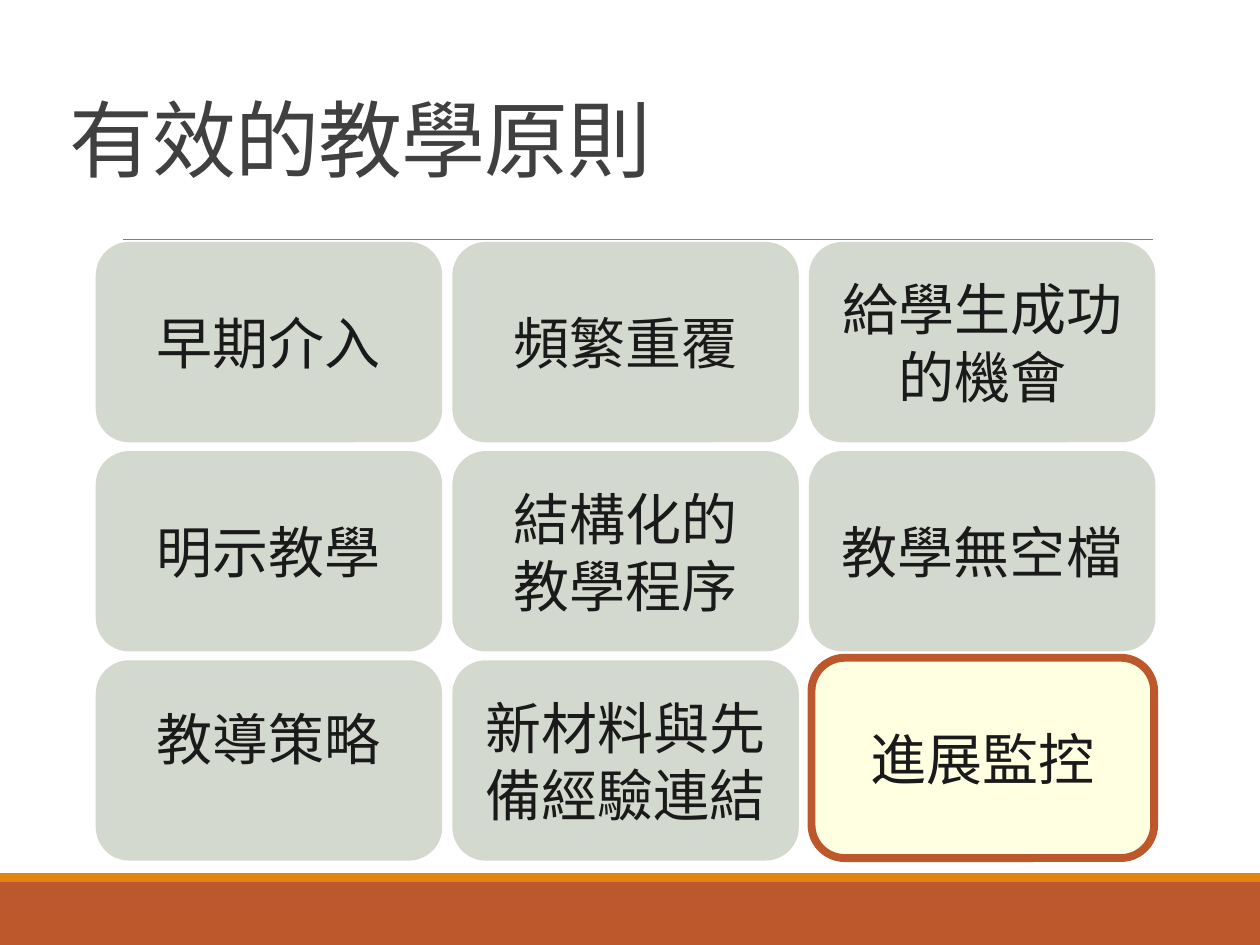
from dataclasses import dataclass

from pptx import Presentation
from pptx import util as u
from pptx.dml.color import RGBColor
from pptx.enum import shapes, text
from pptx.oxml.ns import qn
from lxml import etree

HUES = {"rust": "BD582C", "gold": "E48312", "rule": "808080", "title": "404040",
        "sage": "D4D9CF", "cream": "FFFFE1", "ink": "1A1A1A"}
CJK = "Noto Sans CJK SC"
WIDE, HIGH = 10, 7.5
LEFT, TOP = 0.76, 1.92
STEP_X, STEP_Y = 2.83, 1.66
CARD_W, CARD_H = 2.75, 1.59


@dataclass
class Card:
    col: int
    row: int
    words: str
    lift: float = 0  # extra space below the text, inches
    key: bool = False


CARDS = [
    Card(0, 0, "早期介入"),
    Card(1, 0, "頻繁重覆"),
    Card(2, 0, "給學生成功的機會"),
    Card(0, 1, "明示教學"),
    Card(1, 1, "結構化的\n教學程序"),
    Card(2, 1, "教學無空檔"),
    Card(0, 2, "教導策略", lift=0.36),
    Card(1, 2, "新材料與先備經驗連結"),
    Card(2, 2, "進展監控", key=True),
]


def tint(hue: str) -> RGBColor:
    return RGBColor.from_string(HUES[hue])


def write(frame, words: str, *, size: float, hue: str, face: str = CJK,
          align=text.PP_ALIGN.CENTER, anchor=text.MSO_ANCHOR.MIDDLE,
          lead: float = 1, track: int = 0) -> None:
    frame.word_wrap = True
    frame.auto_size = text.MSO_AUTO_SIZE.NONE
    frame.vertical_anchor = anchor
    frame.text = words
    for para in frame.paragraphs:
        para.alignment, para.line_spacing = align, lead
        for run in para.runs:
            font = run.font
            font.size, font.name = u.Pt(size), face
            font.color.rgb = tint(hue)
            props = run._r.get_or_add_rPr()
            if track:
                props.set("spc", str(track))
            east = etree.Element(qn("a:ea"), typeface=CJK)
            props.find(qn("a:latin")).addnext(east)


def block(slide, kind, x: float, y: float, w: float, h: float, hue: str):
    shape = slide.shapes.add_shape(kind, *map(u.Inches, (x, y, w, h)))
    shape.shadow.inherit = False
    shape.fill.solid()
    shape.fill.fore_color.rgb = tint(hue)
    shape.line.fill.background()
    return shape


def rule(slide, x1: float, x2: float, y: float) -> None:
    line = slide.shapes.add_connector(
        shapes.MSO_CONNECTOR.STRAIGHT, *map(u.Inches, (x1, y, x2, y)))
    line.line.color.rgb = tint("rule")
    line.line.width = u.Pt(0.5)
    etree.SubElement(line._element.spPr, qn("a:effectLst"))


def draw(slide, card: Card) -> None:
    x, y = LEFT + card.col * STEP_X, TOP + card.row * STEP_Y
    w, hue = CARD_W, "sage"
    if card.key:
        x, y, w, hue = x + 0.02, y - 0.02, w - 0.03, "cream"
    shape = block(slide, shapes.MSO_SHAPE.ROUNDED_RECTANGLE, x, y, w, CARD_H, hue)
    if card.key:
        shape.line.color.rgb = tint("rust")
        shape.line.width = u.Pt(4.5)
    shape.text_frame.margin_bottom = u.Inches(0.05 + card.lift)
    write(shape.text_frame, card.words, size=32, hue="ink")


def main() -> None:
    deck = Presentation()
    deck.slide_width, deck.slide_height = u.Inches(WIDE), u.Inches(HIGH)
    slide = deck.slides.add_slide(deck.slide_layouts[5])

    bar = shapes.MSO_SHAPE.RECTANGLE
    block(slide, bar, 0, HIGH - 0.5, WIDE, 0.5, "rust")
    block(slide, bar, 0, HIGH - 0.57, WIDE, 0.07, "gold")
    rule(slide, 0.98, 9.15, 1.9)

    title = slide.shapes.title
    title.left, title.top, title.width, title.height = map(
        u.Inches, (0.45, 0.3, 9, 1.25))
    write(title.text_frame, "有效的教學原則", size=48, hue="title", face="Calibri",
          align=text.PP_ALIGN.LEFT, anchor=text.MSO_ANCHOR.BOTTOM,
          lead=0.85, track=-50)

    for card in CARDS:
        draw(slide, card)
    deck.save("out.pptx")


if __name__ == "__main__":
    main()
